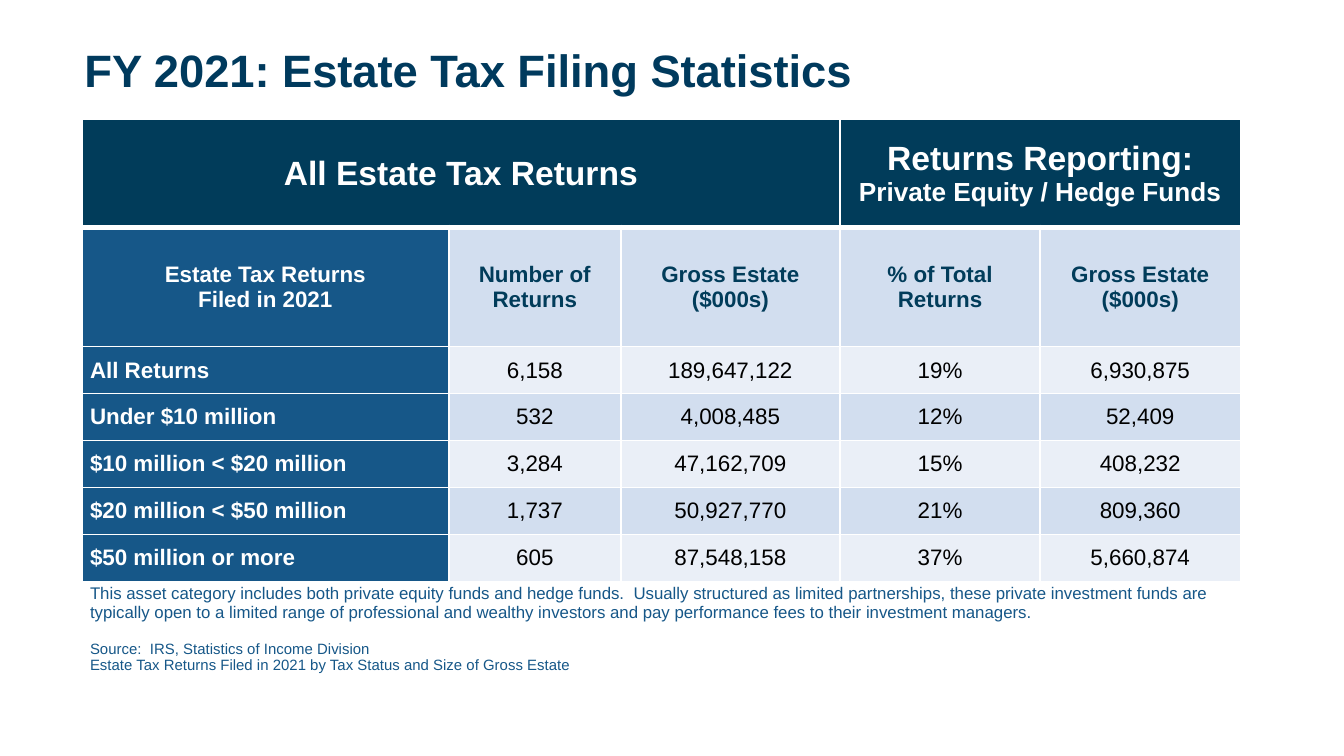
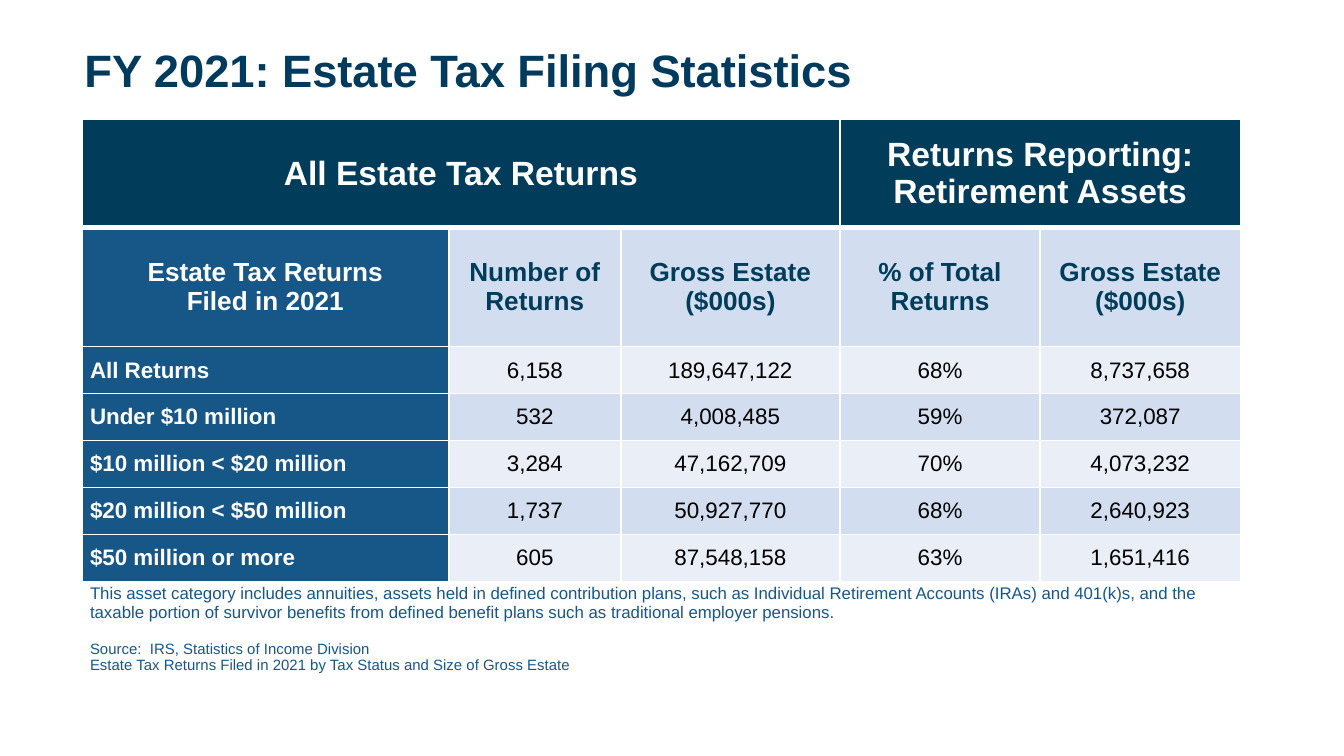
from copy import deepcopy
from dataclasses import dataclass

from lxml import etree
from pptx import Presentation
from pptx.dml.color import RGBColor
from pptx.enum.text import MSO_ANCHOR, PP_ALIGN
from pptx.oxml.ns import qn
from pptx.util import Inches, Pt

MIDDLE = MSO_ANCHOR.MIDDLE
LEFT, CENTER = PP_ALIGN.LEFT, PP_ALIGN.CENTER


@dataclass(frozen=True)
class Theme:
    font: str = "Arial"
    title: str = "003A5D"
    navy: str = "013C5A"
    blue: str = "165788"
    band_dark: str = "D2DEEF"
    band_light: str = "EAEFF7"
    white: str = "FFFFFF"
    black: str = "000000"
    title_size: float = 24.3
    group_size: float = 18
    body_size: float = 12
    note_size: float = 9
    source_size: float = 8
    rule: float = 1
    heavy_rule: float = 3


THEME = Theme()

# Boxes in inches: left, top, width, height
TITLE_BOX = (0.53, 0.3, 8.78, 0.49)
TABLE_BOX = (0.61, 0.89, 8.62, 4.14)
# Relative weights of the table grid
COLUMN_WEIGHTS = (2.73, 1.28, 1.63, 1.49, 1.49)
ROW_WEIGHTS = (0.8, 0.89) + (0.35,) * 5 + (0.7,)
LABEL_INSET, ALL_RETURNS_INSET = 0.06, 0.1
FIRST_ASSET_COLUMN = 3

TITLE = "FY 2021: Estate Tax Filing Statistics"
ALL_RETURNS_GROUP = "All Estate Tax Returns"
COLUMN_HEADS = (
    "Estate Tax Returns\nFiled in 2021",
    "Number of\nReturns",
    "Gross Estate\n($000s)",
    "% of Total Returns",
    "Gross Estate ($000s)",
)
ALL_RETURNS = (
    ("All Returns", "6,158", "189,647,122"),
    ("Under $10 million", "532", "4,008,485"),
    ("$10 million < $20 million", "3,284", "47,162,709"),
    ("$20 million < $50 million", "1,737", "50,927,770"),
    ("$50 million or more", "605", "87,548,158"),
)
SOURCE = (
    "Source:  IRS, Statistics of Income Division\n"
    "Estate Tax Returns Filed in 2021 by Tax Status and Size of Gross Estate"
)


@dataclass(frozen=True)
class AssetCategory:
    group: str
    group_sizes: tuple
    head_size: float
    reported: tuple
    note: str


CATEGORIES = (
    AssetCategory(
        group="Returns Reporting:\nPrivate Equity / Hedge Funds",
        group_sizes=(THEME.group_size, 14),
        head_size=12,
        reported=(
            ("19%", "6,930,875"),
            ("12%", "52,409"),
            ("15%", "408,232"),
            ("21%", "809,360"),
            ("37%", "5,660,874"),
        ),
        note=(
            "This asset category includes both private equity funds and hedge funds.  "
            "Usually structured as limited partnerships, these private investment funds "
            "are typically open to a limited range of professional and wealthy investors "
            "and pay performance fees to their investment managers."
        ),
    ),
    AssetCategory(
        group="Returns Reporting:\nRetirement Assets",
        group_sizes=(THEME.group_size,),
        head_size=14,
        reported=(
            ("68%", "8,737,658"),
            ("59%", "372,087"),
            ("70%", "4,073,232"),
            ("68%", "2,640,923"),
            ("63%", "1,651,416"),
        ),
        note=(
            "This asset category includes annuities, assets held in defined contribution "
            "plans, such as Individual Retirement Accounts (IRAs) and 401(k)s, and the "
            "taxable portion of survivor benefits from defined benefit plans such as "
            "traditional employer pensions."
        ),
    ),
)


def write(paragraph, text, sizes, color, bold=False, align=LEFT):
    """Fill a paragraph; the last size covers any further lines."""
    paragraph.text = text
    paragraph.alignment = align
    for index, run in enumerate(paragraph.runs):
        run.font.name = THEME.font
        run.font.size = Pt(sizes[min(index, len(sizes) - 1)])
        run.font.bold = bold
        run.font.color.rgb = RGBColor.from_string(color)
    for line_break in paragraph._p.findall(qn("a:br")):
        line_break.append(deepcopy(paragraph.runs[0]._r.rPr))


def set_borders(cell, top, bottom):
    properties = cell._tc.get_or_add_tcPr()
    widths = {"a:lnL": THEME.rule, "a:lnR": THEME.rule, "a:lnT": top, "a:lnB": bottom}
    for tag, width in widths.items():
        line = etree.SubElement(properties, qn(tag), w=str(Pt(width)))
        fill = etree.SubElement(line, qn("a:solidFill"))
        etree.SubElement(fill, qn("a:srgbClr"), val=THEME.white)


def prepare_cell(cell, row):
    set_borders(
        cell,
        top=THEME.heavy_rule if row == 1 else THEME.rule,
        bottom=THEME.heavy_rule if row == 0 else THEME.rule,
    )
    cell.fill.background()
    cell.vertical_anchor = MIDDLE
    cell.margin_left = cell.margin_right = Inches(LABEL_INSET)
    cell.margin_top = cell.margin_bottom = 0


def fill_cell(cell, text, sizes, fill, color, bold=True, align=CENTER):
    cell.fill.solid()
    cell.fill.fore_color.rgb = RGBColor.from_string(fill)
    write(cell.text_frame.paragraphs[0], text, sizes, color, bold, align)


def add_title(slide, box):
    frame = slide.shapes.add_textbox(*map(Inches, box)).text_frame
    frame.word_wrap = True
    frame.vertical_anchor = MIDDLE
    heading = frame.paragraphs[0]
    write(heading, TITLE, (THEME.title_size,), THEME.title, bold=True)
    heading.line_spacing = 0.9


def add_grid(slide, box):
    """Add a table whose columns and rows share the box by weight."""
    table = slide.shapes.add_table(
        len(ROW_WEIGHTS), len(COLUMN_WEIGHTS), *map(Inches, box)
    ).table
    table.first_row = table.horz_banding = False
    width, height = box[2:]
    for column, weight in zip(table.columns, COLUMN_WEIGHTS):
        column.width = Inches(width * weight / sum(COLUMN_WEIGHTS))
    for index, (row, weight) in enumerate(zip(table.rows, ROW_WEIGHTS)):
        row.height = Inches(height * weight / sum(ROW_WEIGHTS))
        for cell in row.cells:
            prepare_cell(cell, index)
    return table


def fill_heads(table, category):
    last = len(COLUMN_WEIGHTS) - 1
    groups = (
        (0, FIRST_ASSET_COLUMN - 1, ALL_RETURNS_GROUP, (THEME.group_size,)),
        (FIRST_ASSET_COLUMN, last, category.group, category.group_sizes),
    )
    for start, end, text, sizes in groups:
        table.cell(0, start).merge(table.cell(0, end))
        fill_cell(table.cell(0, start), text, sizes, THEME.navy, THEME.white)
    for column, text in enumerate(COLUMN_HEADS):
        fill, color = (THEME.band_dark, THEME.navy) if column else (THEME.blue, THEME.white)
        fill_cell(table.cell(1, column), text, (category.head_size,), fill, color)


def fill_returns(table, category):
    sizes = (THEME.body_size,)
    for index, (totals, reported) in enumerate(zip(ALL_RETURNS, category.reported)):
        row = index + 2
        size_class, *figures = totals + reported
        fill_cell(table.cell(row, 0), size_class, sizes, THEME.blue, THEME.white, align=LEFT)
        band = THEME.band_dark if index % 2 else THEME.band_light
        for column, figure in enumerate(figures, start=1):
            cell = table.cell(row, column)
            inset = ALL_RETURNS_INSET if column < FIRST_ASSET_COLUMN else 0
            cell.margin_left = cell.margin_right = Inches(inset)
            fill_cell(cell, figure, sizes, band, THEME.black, bold=False)


def fill_note(table, note):
    row = len(ROW_WEIGHTS) - 1
    cell = table.cell(row, 0)
    cell.merge(table.cell(row, len(COLUMN_WEIGHTS) - 1))
    frame = cell.text_frame
    write(frame.paragraphs[0], note, (THEME.note_size,), THEME.blue)
    source = frame.add_paragraph()
    write(source, SOURCE, (THEME.source_size,), THEME.blue)
    source.space_before = Pt(10)


def add_statistics_slide(deck, category):
    slide = deck.slides.add_slide(deck.slide_layouts[6])
    add_title(slide, TITLE_BOX)
    table = add_grid(slide, TABLE_BOX)
    fill_heads(table, category)
    fill_returns(table, category)
    fill_note(table, category.note)


def main():
    deck = Presentation()
    deck.slide_width = Inches(10)
    deck.slide_height = deck.slide_width * 9 // 16
    for category in CATEGORIES:
        add_statistics_slide(deck, category)
    deck.save("out.pptx")


if __name__ == "__main__":
    main()
